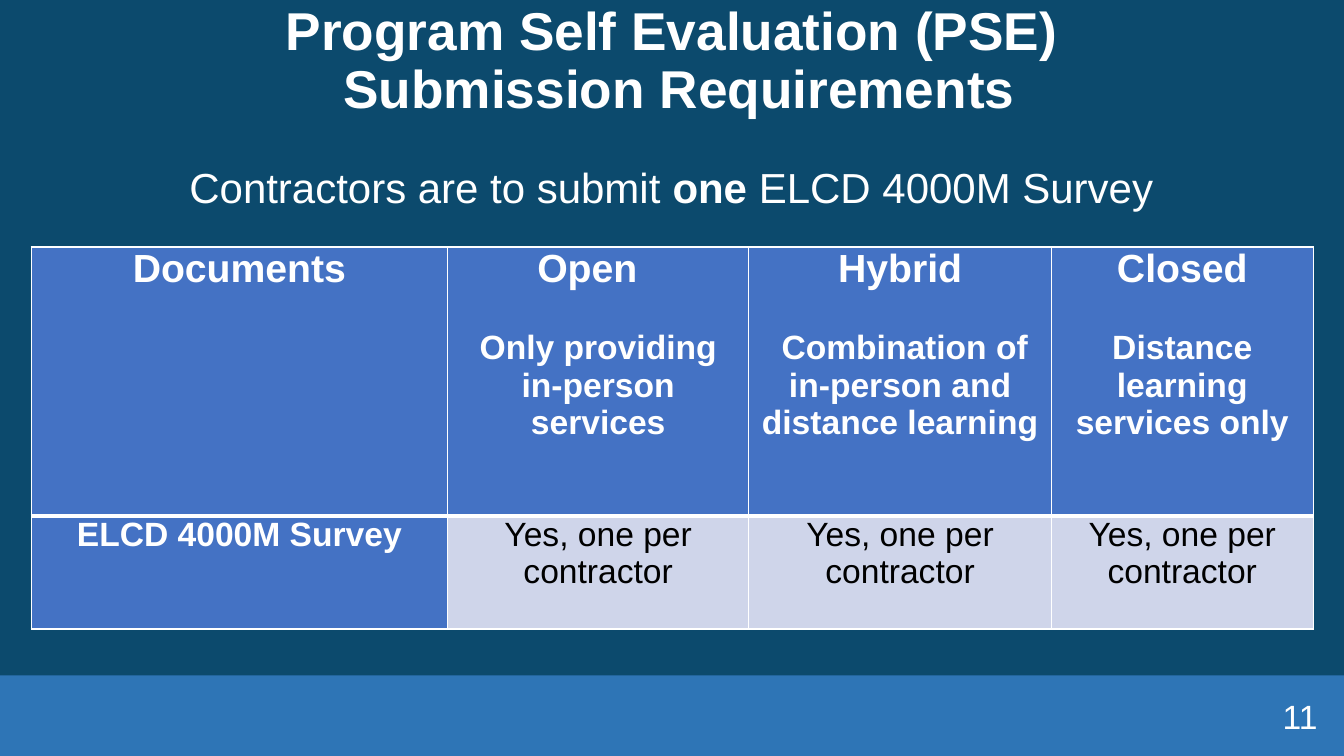
from dataclasses import dataclass

import pptx
import pptx.dml.color
import pptx.enum.shapes
import pptx.enum.text
import pptx.oxml
import pptx.oxml.ns
import pptx.util

ALIGN = pptx.enum.text.PP_ALIGN
ANCHOR = pptx.enum.text.MSO_ANCHOR
WIDTH, HEIGHT = pptx.util.Inches(13.333), pptx.util.Inches(7.5)
GRID_COLUMNS, GRID_ROWS = 160, 90


@dataclass(frozen=True)
class Theme:
    font: str = "Arial"
    background: str = "0C4A6D"
    band: str = "2E75B6"
    light: str = "FFFFFF"
    dark: str = "000000"
    heading_fill: str = "4472C4"
    answer_fill: str = "CFD5EA"
    title: int = 38
    lead: int = 30
    heading: int = 28
    body: int = 24
    rule: int = 1
    heavy_rule: int = 3


THEME = Theme()


@dataclass(frozen=True)
class Box:
    """A place in grid columns (left, width) and grid rows (top, height)."""
    left: float
    top: float
    width: float
    height: float

    def lengths(self) -> tuple[int, int, int, int]:
        return (across(self.left), down(self.top), across(self.width), down(self.height))


@dataclass(frozen=True)
class Span:
    text: str
    size: int
    bold: bool = False
    color: str = THEME.light


@dataclass(frozen=True)
class Para:
    spans: tuple[Span, ...]
    format: dict


@dataclass(frozen=True)
class TextBlock:
    box: Box
    paras: tuple[Para, ...]
    anchor: ANCHOR


@dataclass(frozen=True)
class Cell:
    paras: tuple[Para, ...]
    fill: str


def across(columns: float) -> int:
    return round(WIDTH * columns / GRID_COLUMNS)


def down(rows: float) -> int:
    return round(HEIGHT * rows / GRID_ROWS)


def rgb(color: str) -> pptx.dml.color.RGBColor:
    return pptx.dml.color.RGBColor.from_string(color)


def apply(target: object, values: dict) -> None:
    for name, value in values.items():
        setattr(target, name, value)


def write(frame: pptx.text.text.TextFrame, paras: tuple[Para, ...]) -> None:
    for index, para in enumerate(paras):
        paragraph = frame.add_paragraph() if index else frame.paragraphs[0]
        apply(paragraph, para.format)
        for span in para.spans:
            for line, text in enumerate(span.text.split("\n")):
                if line:
                    paragraph.add_line_break()
                run = paragraph.add_run()
                run.text = text
                apply(run.font, {"name": THEME.font, "bold": span.bold,
                                 "size": pptx.util.Pt(span.size)})
                run.font.color.rgb = rgb(span.color)


def draw_text(page: pptx.slide.Slide, block: TextBlock) -> None:
    frame = page.shapes.add_textbox(*block.box.lengths()).text_frame
    apply(frame, {"word_wrap": True, "vertical_anchor": block.anchor})
    write(frame, block.paras)


def draw_band(page: pptx.slide.Slide, box: Box) -> None:
    band = page.shapes.add_shape(pptx.enum.shapes.MSO_SHAPE.RECTANGLE, *box.lengths())
    band.shadow.inherit = False
    band.fill.solid()
    band.fill.fore_color.rgb = rgb(THEME.band)
    band.line.fill.background()


def draw_borders(cell: pptx.table._Cell, widths: dict[str, int]) -> None:
    """Put the side lines (L, R, T, B; widths in points) ahead of the cell's fill."""
    properties = cell._tc.get_or_add_tcPr()
    for index, (side, width) in enumerate(widths.items()):
        properties.insert(index, pptx.oxml.parse_xml(
            f'<a:ln{side} {pptx.oxml.ns.nsdecls("a")} w="{pptx.util.Pt(width)}">'
            f'<a:solidFill><a:srgbClr val="{THEME.light}"/></a:solidFill></a:ln{side}>'))


def draw_table(page: pptx.slide.Slide, left: float, top: float, widths: tuple[float, ...],
               heights: tuple[float, ...], rows: tuple[tuple[Cell, ...], ...]) -> None:
    box = Box(left, top, sum(widths), sum(heights))
    table = page.shapes.add_table(len(heights), len(widths), *box.lengths()).table
    table.horz_banding = False
    for column, width in zip(table.columns, widths):
        column.width = across(width)
    for row, height in zip(table.rows, heights):
        row.height = down(height)
    margins = {"margin_left": pptx.util.Inches(0.07), "margin_right": pptx.util.Inches(0.07),
               "margin_top": 0, "margin_bottom": 0}
    for row_index, row in enumerate(rows):
        heavy_side = "T" if row_index else "B"
        sides = {side: THEME.heavy_rule if side == heavy_side else THEME.rule for side in "LRTB"}
        for column_index, content in enumerate(row):
            cell = table.cell(row_index, column_index)
            apply(cell, margins)
            cell.fill.solid()
            cell.fill.fore_color.rgb = rgb(content.fill)
            draw_borders(cell, sides)
            write(cell.text_frame, content.paras)


CENTER = {"alignment": ALIGN.CENTER}
AFTER_GAP = {**CENTER, "space_before": pptx.util.Pt(27.6)}


def heading_cell(name: str, detail: str) -> Cell:
    return Cell((Para((Span(name, THEME.heading, True),), CENTER),
                 Para((Span(detail, THEME.body, True),), AFTER_GAP)), THEME.heading_fill)


def single_cell(span: Span, fill: str) -> Cell:
    return Cell((Para((span,), CENTER),), fill)


TITLE = TextBlock(
    Box(1.92, -0.12, 156.12, 15.12),
    (Para((Span("Program Self Evaluation (PSE)\n Submission Requirements", THEME.title, True),),
          {**CENTER, "line_spacing": 0.9}),),
    ANCHOR.MIDDLE)
LEAD = TextBlock(
    Box(21.36, 18.6, 129.6, 7.32),
    (Para((Span("Contractors are to submit ", THEME.lead), Span("one", THEME.lead, True),
           Span(" ELCD 4000M Survey", THEME.lead)), {"alignment": ALIGN.LEFT}),),
    ANCHOR.TOP)
PAGE_NUMBER = TextBlock(
    Box(122.04, 82.8, 36, 4.8),
    (Para((Span("11", THEME.body),), {"alignment": ALIGN.RIGHT}),),
    ANCHOR.MIDDLE)
ANSWER = single_cell(Span("Yes, one per contractor", THEME.body, color=THEME.dark),
                     THEME.answer_fill)
REQUIREMENTS = (
    (single_cell(Span("Documents", THEME.heading, True), THEME.heading_fill),
     heading_cell("Open  ", "Only providing in-person services"),
     heading_cell("Hybrid", " Combination of in-person and distance learning"),
     heading_cell("Closed", "Distance learning services only")),
    (single_cell(Span("ELCD 4000M Survey", THEME.body, True), THEME.heading_fill),
     *[ANSWER] * 3),
)


def main() -> None:
    deck = pptx.Presentation()
    apply(deck, {"slide_width": WIDTH, "slide_height": HEIGHT})
    page = deck.slides.add_slide(deck.slide_layouts[6])
    page.background.fill.solid()
    page.background.fill.fore_color.rgb = rgb(THEME.background)
    draw_band(page, Box(0, 80.4, GRID_COLUMNS, 9.6))
    for block in (TITLE, LEAD, PAGE_NUMBER):
        draw_text(page, block)
    draw_table(page, 3.72, 29.4, (49.56, 35.88, 36, 31.2), (32.04, 13.44), REQUIREMENTS)
    deck.save("out.pptx")


if __name__ == "__main__":
    main()
